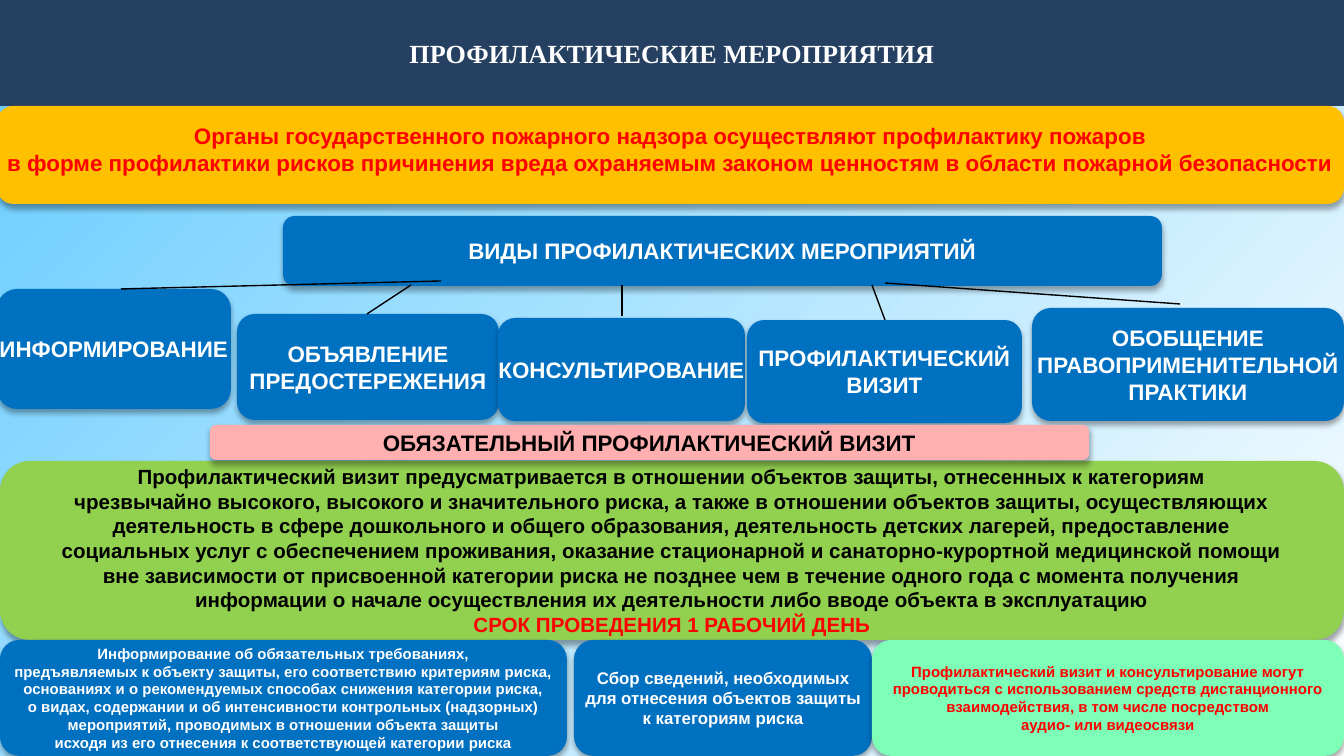
from dataclasses import dataclass

from lxml.etree import SubElement
from pptx import Presentation
from pptx.dml.color import RGBColor
from pptx.enum.shapes import MSO_CONNECTOR, MSO_SHAPE
from pptx.enum.text import MSO_ANCHOR, MSO_AUTO_SIZE, PP_ALIGN
from pptx.oxml.ns import qn
from pptx.util import Emu, Pt

EMU_PER_PX = 914400 / 134.4
W, H = 1344, 756
BLUE, WHITE, BLACK, RED = "0070C0", "FFFFFF", "000000", "FF0000"


@dataclass
class Box:
    """A rounded panel with centred bold lines of text."""
    x: int
    y: int
    w: int
    h: int
    lines: list[str]
    fill: str = BLUE
    color: str = WHITE
    size: int = 12
    bottom: int = 8
    last_color: str = ""


@dataclass
class Line:
    """A thin line between two points."""
    x1: int
    y1: int
    x2: int
    y2: int


HEADER = Box(0, 0, W, 106, ["ПРОФИЛАКТИЧЕСКИЕ МЕРОПРИЯТИЯ"], "254061", size=14)

BOXES = [
    Box(283, 216, 879, 70, ["ВИДЫ ПРОФИЛАКТИЧЕСКИХ МЕРОПРИЯТИЙ"]),
    Box(-3, 106, 1347, 98, [
        "Органы государственного пожарного надзора осуществляют профилактику пожаров",
        "в форме профилактики рисков причинения вреда охраняемым законом ценностям "
        "в области пожарной безопасности",
    ], "FFC000", RED, bottom=20),
    Box(-3, 289, 234, 120, ["ИНФОРМИРОВАНИЕ"]),
    Box(237, 314, 262, 106, ["ОБЪЯВЛЕНИЕ", "ПРЕДОСТЕРЕЖЕНИЯ"]),
    Box(498, 318, 247, 103, ["КОНСУЛЬТИРОВАНИЕ"]),
    Box(747, 320, 275, 103, ["ПРОФИЛАКТИЧЕСКИЙ", "ВИЗИТ"]),
    Box(1032, 308, 312, 113, ["ОБОБЩЕНИЕ", "ПРАВОПРИМЕНИТЕЛЬНОЙ", "ПРАКТИКИ"]),
    Box(0, 461, W, 179, [
        "Профилактический визит предусматривается в отношении объектов защиты, "
        "отнесенных к категориям",
        "чрезвычайно высокого, высокого и значительного риска, а также в отношении "
        "объектов защиты, осуществляющих",
        "деятельность в сфере дошкольного и общего образования, деятельность детских "
        "лагерей, предоставление",
        "социальных услуг с обеспечением проживания, оказание стационарной и "
        "санаторно-курортной медицинской помощи",
        "вне зависимости от присвоенной категории риска не позднее чем в течение "
        "одного года с момента получения",
        "информации о начале осуществления их деятельности либо вводе объекта "
        "в эксплуатацию",
        "СРОК ПРОВЕДЕНИЯ 1 РАБОЧИЙ ДЕНЬ",
    ], "92D050", BLACK, 11, last_color=RED),
    Box(0, 640, 567, 116, [
        "Информирование об обязательных требованиях,",
        "предъявляемых к объекту защиты, его соответствию критериям риска,",
        "основаниях и о рекомендуемых способах снижения категории риска,",
        "о видах, содержании и об интенсивности контрольных (надзорных)",
        "мероприятий, проводимых в отношении объекта защиты",
        "исходя из его отнесения к соответствующей категории риска",
    ], size=8),
    Box(574, 640, 298, 116, [
        "Сбор сведений, необходимых",
        "для отнесения объектов защиты",
        "к категориям риска",
    ], size=9),
    Box(872, 640, 472, 116, [
        "Профилактический визит и консультирование могут",
        "проводиться с использованием средств дистанционного",
        "взаимодействия, в том числе посредством",
        "аудио- или видеосвязи",
    ], "7DFFB8", RED, 8),
]

LINES = [
    Line(885, 283, 1180, 304),
    Line(872, 285, 885, 320),
    Line(622, 285, 622, 316),
    Line(411, 285, 367, 314),
    Line(121, 289, 441, 281),
]

VISIT = Box(210, 425, 879, 35, ["ОБЯЗАТЕЛЬНЫЙ ПРОФИЛАКТИЧЕСКИЙ ВИЗИТ"], "FFAFAF", BLACK)


def px(n: int) -> Emu:
    """Convert pixels to EMU."""
    return Emu(round(n * EMU_PER_PX))


def rgb(value: str) -> RGBColor:
    """Convert a hex string to a colour."""
    return RGBColor.from_string(value)


def write(shape, box: Box, font: str) -> None:
    """Fill a shape and write the lines of its box."""
    shape.fill.solid()
    shape.fill.fore_color.rgb = rgb(box.fill)
    shape.line.fill.background()
    tf = shape.text_frame
    tf.auto_size = MSO_AUTO_SIZE.NONE
    tf.vertical_anchor = MSO_ANCHOR.MIDDLE
    tf.text = "\n".join(box.lines)
    for p in tf.paragraphs:
        p.alignment = PP_ALIGN.CENTER
        p.font.name = font
        p.font.size = Pt(box.size)
        p.font.bold = True
        p.font.color.rgb = rgb(box.color)
    if box.last_color:
        tf.paragraphs[-1].font.color.rgb = rgb(box.last_color)


def add_shadow(shape) -> None:
    """Give a shape a soft shadow below it."""
    shape.shadow.inherit = False
    effects = shape._element.spPr.find(qn("a:effectLst"))
    shadow = SubElement(effects, qn("a:outerShdw"), blurRad=str(Pt(3.1)),
                        dist=str(Pt(1.8)), dir="5400000", rotWithShape="0")
    color = SubElement(shadow, qn("a:srgbClr"), val=BLACK)
    SubElement(color, qn("a:alpha"), val="35000")


def add_box(s, box: Box) -> None:
    """Draw a rounded panel."""
    sp = s.shapes.add_shape(MSO_SHAPE.FLOWCHART_ALTERNATE_PROCESS,
                            px(box.x), px(box.y), px(box.w), px(box.h))
    write(sp, box, "Arial")
    add_shadow(sp)
    tf = sp.text_frame
    tf.word_wrap = False
    tf.margin_left = tf.margin_right = px(15)
    tf.margin_top, tf.margin_bottom = px(8), px(box.bottom)


def add_line(s, line: Line) -> None:
    """Draw a thin black line."""
    c = s.shapes.add_connector(MSO_CONNECTOR.STRAIGHT, px(line.x1), px(line.y1),
                               px(line.x2), px(line.y2))
    c.line.color.rgb = rgb(BLACK)
    c.line.width = Pt(0.75)
    SubElement(c._element.spPr, qn("a:effectLst"))


def add_title(s, box: Box) -> None:
    """Turn the title placeholder into the header bar."""
    title = s.shapes.title
    title.left, title.top = px(box.x), px(box.y)
    title.width, title.height = px(box.w), px(box.h)
    write(title, box, "Times New Roman")


def set_background(s) -> None:
    """Paint a diagonal blue to white gradient."""
    fill = s.background.fill
    fill.gradient()
    fill.gradient_angle = 315
    for stop, color in zip(fill.gradient_stops, ("66CCFF", WHITE)):
        stop.color.rgb = rgb(color)


def main() -> None:
    """Build the slide and save it."""
    prs = Presentation()
    prs.slide_width, prs.slide_height = px(W), px(H)
    s = prs.slides.add_slide(prs.slide_layouts[5])
    set_background(s)
    add_title(s, HEADER)
    for box in BOXES:
        add_box(s, box)
    for line in LINES:
        add_line(s, line)
    add_box(s, VISIT)
    prs.save("out.pptx")


if __name__ == "__main__":
    main()
